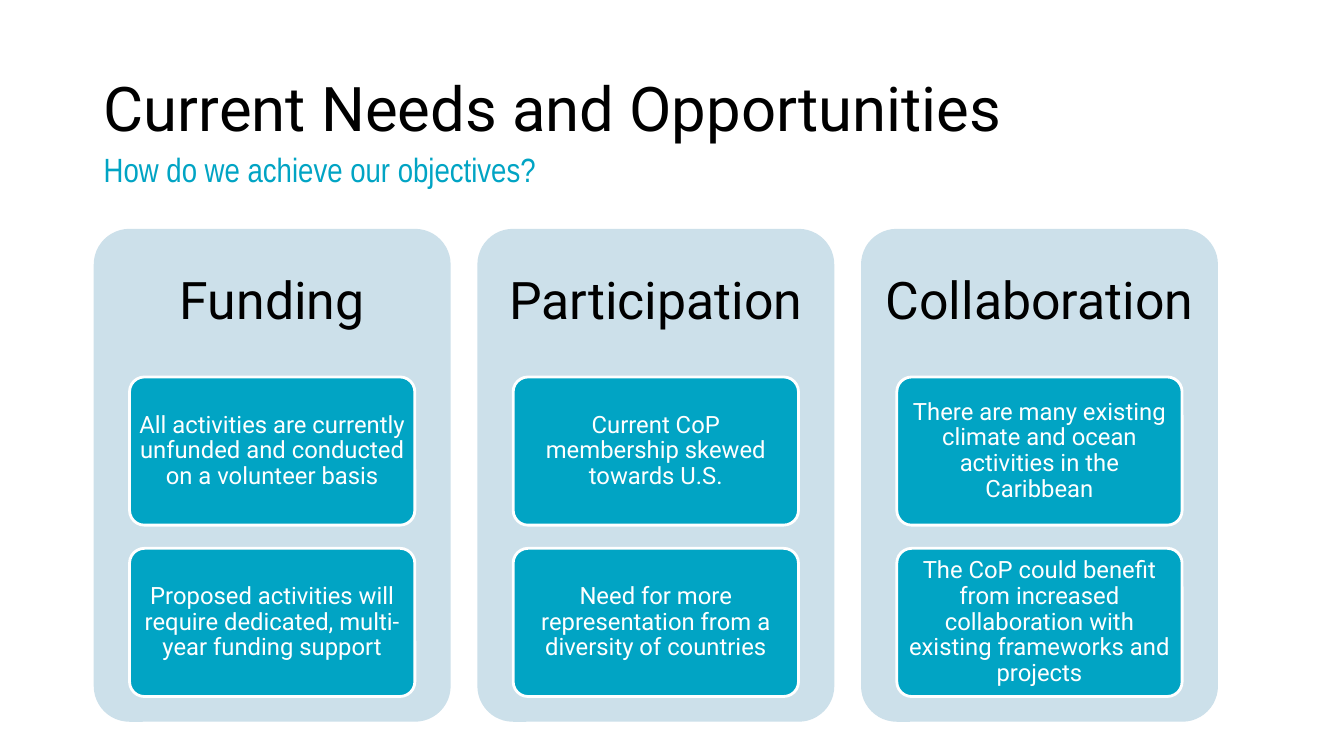
import pptx
import pptx.util
import pptx.dml.color
import pptx.enum.shapes
import pptx.enum.text

Inches = pptx.util.Inches
ALIGN = pptx.enum.text.PP_ALIGN
ANCHOR = pptx.enum.text.MSO_ANCHOR
ROUNDED = pptx.enum.shapes.MSO_SHAPE.ROUNDED_RECTANGLE

COLORS = {"panel": "CCE0EA", "teal": "01A4C4", "black": "000000", "white": "FFFFFF"}

COLUMNS = [
    ("Funding", [
        "All activities are currently unfunded and conducted on a volunteer basis",
        "Proposed activities will require dedicated, multi-year funding support"]),
    ("Participation", [
        "Current CoP membership skewed towards U.S.",
        "Need for more representation from a diversity of countries"]),
    ("Collaboration", [
        "There are many existing climate and ocean activities in the Caribbean",
        "The CoP could benefit from increased collaboration with existing frameworks and projects"]),
]


def write(shape, text, size, color, font="Roboto", align=ALIGN.CENTER,
          anchor=ANCHOR.MIDDLE, insets=(0.1, 0.05), spacing=0.9):
    """Fill a shape with one paragraph; insets are horizontal and vertical inches."""
    frame = shape.text_frame
    frame.text = text
    frame.word_wrap = True
    frame.auto_size = pptx.enum.text.MSO_AUTO_SIZE.NONE
    frame.vertical_anchor = anchor
    frame.margin_left = frame.margin_right = Inches(insets[0])
    frame.margin_top = frame.margin_bottom = Inches(insets[1])
    paragraph = frame.paragraphs[0]
    paragraph.alignment = align
    paragraph.line_spacing = spacing
    paragraph.font.name = font
    paragraph.font.size = pptx.util.Pt(size)
    paragraph.font.color.rgb = pptx.dml.color.RGBColor.from_string(COLORS[color])


def add_rounded(left, top, width, height, fill):
    shape = slide.shapes.add_shape(
        ROUNDED, Inches(left), Inches(top), Inches(width), Inches(height))
    shape.adjustments[0] = 0.1
    shape.shadow.inherit = False
    shape.fill.solid()
    shape.fill.fore_color.rgb = pptx.dml.color.RGBColor.from_string(COLORS[fill])
    shape.line.fill.background()
    return shape


presentation = pptx.Presentation()
presentation.slide_width = Inches(13.33)
presentation.slide_height = Inches(7.5)
slide = presentation.slides.add_slide(presentation.slide_layouts[5])

title = slide.shapes.title
title.left, title.top = Inches(0.93), Inches(0.64)
title.width, title.height = Inches(10.19), Inches(0.84)
write(title, "Current Needs and Opportunities", 44, "black",
      align=ALIGN.LEFT, anchor=ANCHOR.TOP, spacing=1.0)

subtitle = slide.shapes.add_textbox(Inches(0.93), Inches(1.43), Inches(5.12), Inches(0.5))
write(subtitle, "How do we achieve our objectives?", 24, "teal", font="Arial Narrow",
      align=ALIGN.LEFT, anchor=ANCHOR.TOP, spacing=1.0)

PANEL_LEFT, PANEL_TOP, PANEL_WIDTH, PANEL_HEIGHT = 0.93, 2.27, 3.54, 4.89
PANEL_PITCH = 3.805
CARD_WIDTH, CARD_HEIGHT, CARD_PITCH = 2.83, 1.47, 1.7
HEADING_HEIGHT = 1.47

for column, (heading_text, needs) in enumerate(COLUMNS):
    left = PANEL_LEFT + column * PANEL_PITCH
    add_rounded(left, PANEL_TOP, PANEL_WIDTH, PANEL_HEIGHT, "panel")

    heading = slide.shapes.add_textbox(
        Inches(left), Inches(PANEL_TOP), Inches(PANEL_WIDTH), Inches(HEADING_HEIGHT))
    write(heading, heading_text, 37, "black", insets=(0.15, 0.15))

    card_left = left + (PANEL_WIDTH - CARD_WIDTH) / 2
    for row, need in enumerate(needs):
        card_top = PANEL_TOP + HEADING_HEIGHT + row * CARD_PITCH
        card = add_rounded(card_left, card_top, CARD_WIDTH, CARD_HEIGHT, "teal")
        card.line.color.rgb = pptx.dml.color.RGBColor.from_string(COLORS["white"])
        card.line.width = pptx.util.Pt(2)
        write(card, need, 17, "white", insets=(0.05, 0.04))

presentation.save("out.pptx")
